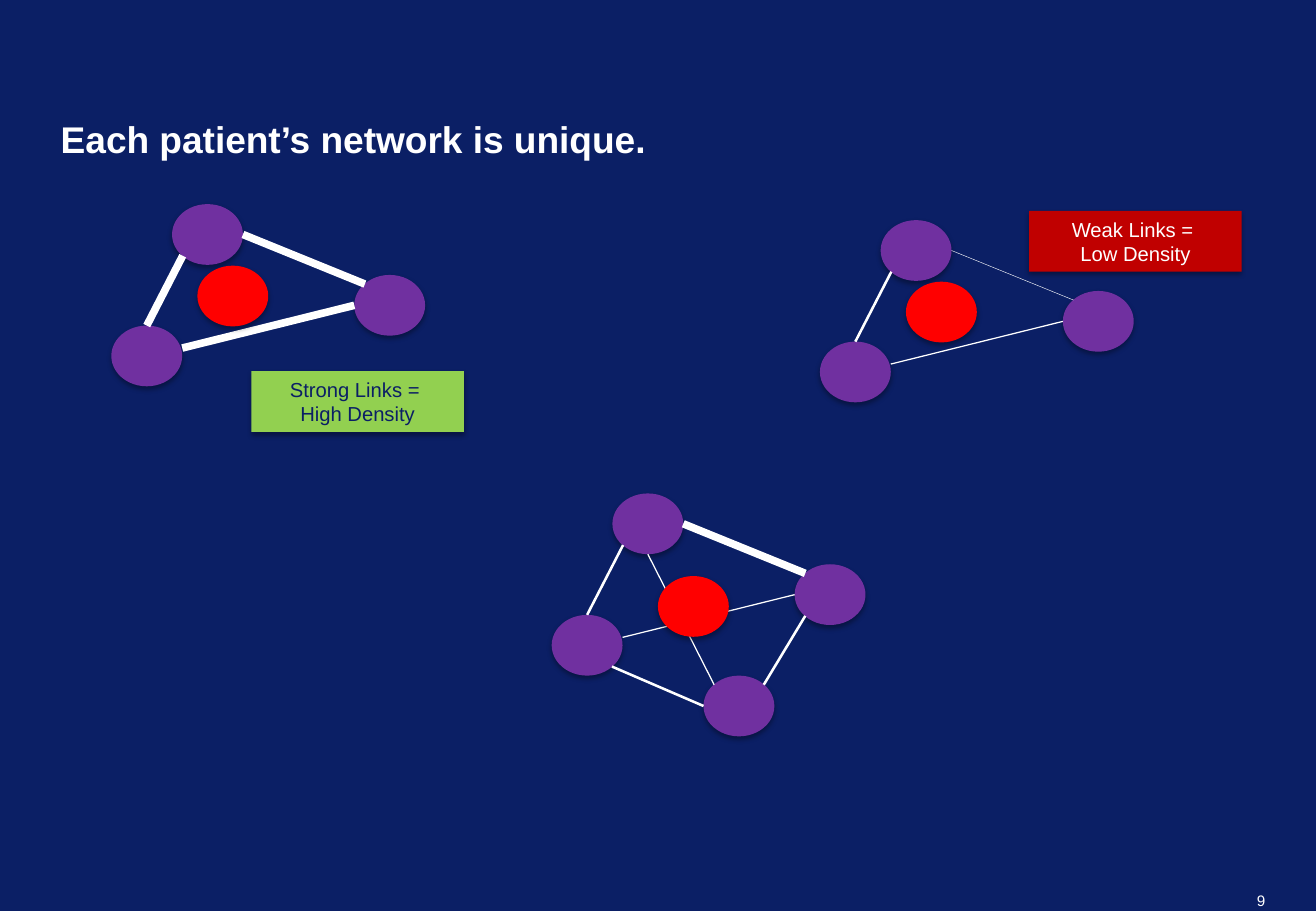
from lxml import etree
from pptx import Presentation
from pptx.dml.color import RGBColor
from pptx.enum.shapes import MSO_CONNECTOR, MSO_SHAPE
from pptx.enum.text import MSO_ANCHOR, MSO_AUTO_SIZE, PP_ALIGN
from pptx.oxml.ns import qn
from pptx.util import Pt

STRAIGHT = MSO_CONNECTOR.STRAIGHT
OVAL, RECTANGLE = MSO_SHAPE.OVAL, MSO_SHAPE.RECTANGLE
LEFT, CENTER, RIGHT = PP_ALIGN.LEFT, PP_ALIGN.CENTER, PP_ALIGN.RIGHT
TOP, MIDDLE, BOTTOM = MSO_ANCHOR.TOP, MSO_ANCHOR.MIDDLE, MSO_ANCHOR.BOTTOM

COLORS = {
    "navy": "0B1F65", "white": "FFFFFF", "black": "000000",
    "purple": "7030A0", "red": "FF0000", "dark red": "C00000", "green": "92D050",
}
FONT = "Arial"
SLIDE_SIZE = (780, 540)
NODE_SIZE = (42, 36)
LABEL_SIZE = (126, 36)
THICK, MEDIUM, THIN, HAIR = 4.5, 1.5, 0.75, 0.25

TITLE = "Each patient’s network is unique."
PAGE_NUMBER = "9"

# Member positions, measured from the north member of a network
MEMBERS = {"north": (0, 0), "west": (-36, 72), "east": (108, 42), "south": (54, 108)}

# Points on a member's outline, as fractions of its width and height
ANCHORS = {
    "top": (0.5, 0), "bottom": (0.5, 1), "left": (0, 0.5), "right": (1, 0.5),
    "top left": (0.15, 0.15), "top right": (0.85, 0.15),
    "bottom left": (0.15, 0.85), "bottom right": (0.85, 0.85),
    "upper right": (1, 0.37),
}

# Links: member, anchor, member, anchor
NORTH_EAST = ("north", "right", "east", "top left")
WEST_NORTH = ("west", "top", "north", "bottom left")
WEST_EAST = ("west", "upper right", "east", "left")
WEST_SOUTH = ("west", "bottom right", "south", "left")
SOUTH_EAST = ("south", "top right", "east", "bottom left")
NORTH_SOUTH = ("north", "bottom", "south", "top left")

NETWORKS = [
    {"origin": (363, 292.5), "members": ["north", "west", "east", "south"],
     "patient": (27, 49),
     "links": [(WEST_SOUTH, MEDIUM), (NORTH_EAST, THICK), (WEST_NORTH, MEDIUM),
               (SOUTH_EAST, MEDIUM), (NORTH_SOUTH, THIN), (WEST_EAST, THIN)]},
    {"origin": (522, 130.5), "members": ["north", "west", "east"],
     "patient": (15, 36.5),
     "links": [(NORTH_EAST, HAIR), (WEST_NORTH, MEDIUM), (WEST_EAST, THIN)],
     "label": (["Weak Links = ", "Low Density"], (610, 125), "dark red", "white")},
    {"origin": (102, 121), "members": ["north", "west", "east"],
     "patient": (15, 36.5),
     "links": [(NORTH_EAST, THICK), (WEST_NORTH, THICK), (WEST_EAST, THICK)],
     "label": (["Strong Links = ", "High Density"], (149, 220), "green", "navy")},
]


def rgb(name):
    return RGBColor.from_string(COLORS[name])


def write(shape, lines, size, color="white", bold=False, align=LEFT, anchor=TOP,
          margins=(0, 0), wrap=True, line_spacing=1):
    frame = shape.text_frame
    frame.word_wrap = wrap
    frame.auto_size = MSO_AUTO_SIZE.NONE
    frame.vertical_anchor = anchor
    frame.margin_left = frame.margin_right = Pt(margins[0])
    frame.margin_top = frame.margin_bottom = Pt(margins[1])
    for index, line in enumerate(lines):
        paragraph = frame.paragraphs[0] if index == 0 else frame.add_paragraph()
        paragraph.alignment = align
        paragraph.line_spacing = line_spacing
        run = paragraph.add_run()
        run.text = line
        run.font.name = FONT
        run.font.size = Pt(size)
        run.font.bold = bold
        run.font.color.rgb = rgb(color)


def add_soft_shadow(shape):
    shape.shadow.inherit = False
    effects = shape._element.spPr.find(qn("a:effectLst"))
    shadow = etree.SubElement(effects, qn("a:outerShdw"), blurRad=str(Pt(3.1)),
                              dist=str(Pt(1.8)), dir="5400000", rotWithShape="0")
    color = etree.SubElement(shadow, qn("a:srgbClr"), val=COLORS["black"])
    etree.SubElement(color, qn("a:alpha"), val="35000")


def add_filled(shapes, kind, position, size, color):
    shape = shapes.add_shape(kind, *map(Pt, position + size))
    shape.fill.solid()
    shape.fill.fore_color.rgb = rgb(color)
    shape.line.fill.background()
    add_soft_shadow(shape)
    return shape


def shifted(origin, offset):
    return (origin[0] + offset[0], origin[1] + offset[1])


def anchor_point(origin, member, anchor):
    across, down = ANCHORS[anchor]
    return shifted(shifted(origin, MEMBERS[member]),
                   (across * NODE_SIZE[0], down * NODE_SIZE[1]))


def add_link(shapes, start, end, width):
    link = shapes.add_connector(STRAIGHT, *map(Pt, start + end))
    link.line.color.rgb = rgb("white")
    link.line.width = Pt(width)
    etree.SubElement(link._element.spPr, qn("a:effectLst"))


def add_network(slide, network):
    origin = network["origin"]
    shapes = slide.shapes.add_group_shape().shapes
    for member in network["members"]:
        add_filled(shapes, OVAL, shifted(origin, MEMBERS[member]), NODE_SIZE, "purple")
    for (first, first_anchor, second, second_anchor), width in network["links"]:
        add_link(shapes, anchor_point(origin, first, first_anchor),
                 anchor_point(origin, second, second_anchor), width)
    add_filled(shapes, OVAL, shifted(origin, network["patient"]), NODE_SIZE, "red")
    if "label" in network:
        lines, position, fill, color = network["label"]
        label = add_filled(slide.shapes, RECTANGLE, position, LABEL_SIZE, fill)
        write(label, lines, 12, color, align=CENTER, anchor=MIDDLE, margins=(7.2, 3.6))


def main():
    presentation = Presentation()
    presentation.slide_width, presentation.slide_height = map(Pt, SLIDE_SIZE)
    slide = presentation.slides.add_slide(presentation.slide_layouts[5])
    slide.background.fill.solid()
    slide.background.fill.fore_color.rgb = rgb("navy")

    title = slide.shapes.title
    title.left, title.top, title.width, title.height = map(Pt, (36, 30, 708, 66))
    write(title, [TITLE], 22, bold=True, anchor=BOTTOM, line_spacing=0.9)

    page_number = slide.shapes.add_textbox(*map(Pt, (739, 528.5, 11, 11)))
    write(page_number, [PAGE_NUMBER], 9, align=RIGHT, wrap=False)

    for network in NETWORKS:
        add_network(slide, network)
    presentation.save("out.pptx")


if __name__ == "__main__":
    main()
